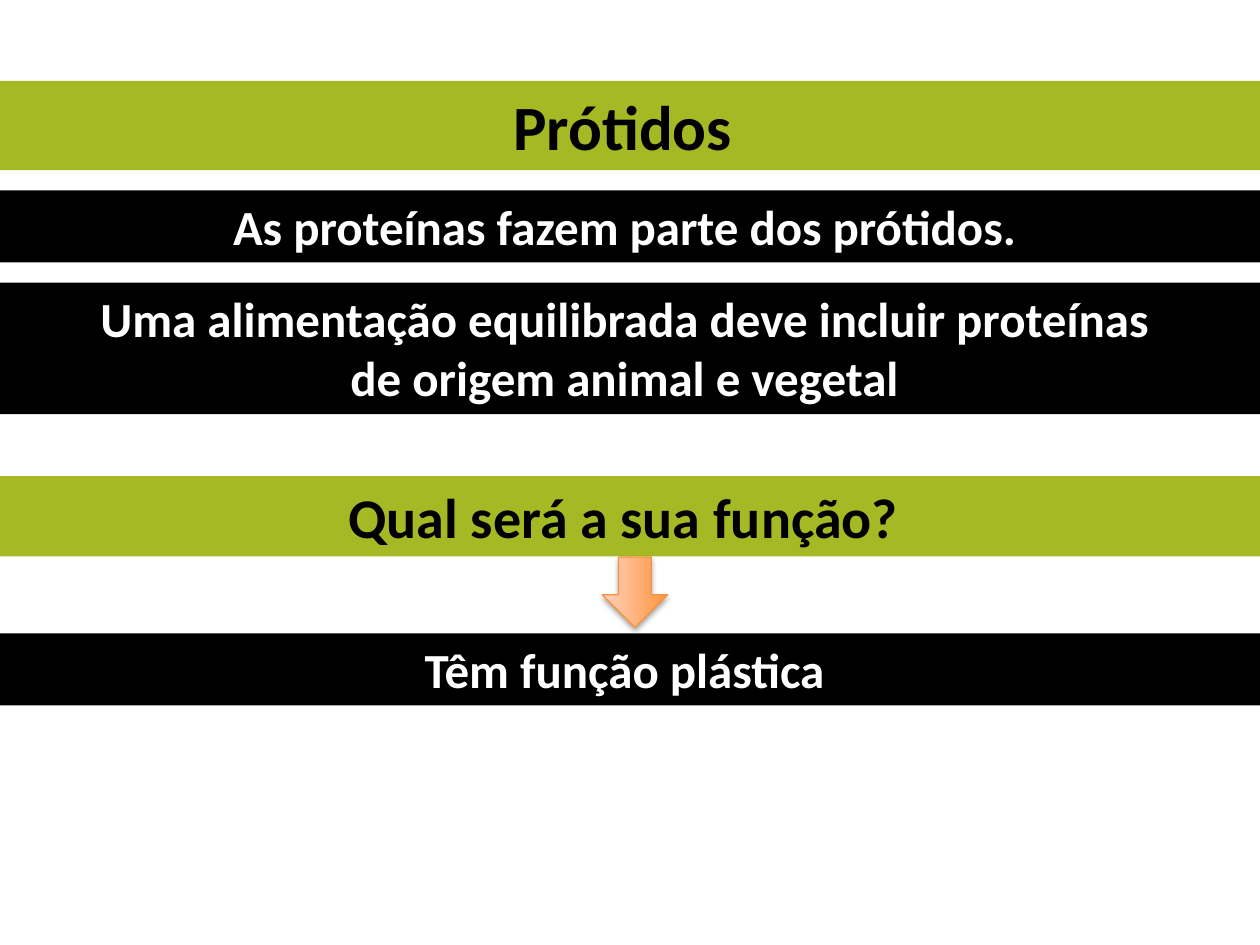
import pptx
import pptx.util
from pptx.dml.color import RGBColor
from pptx.enum.shapes import MSO_SHAPE
from pptx.enum.text import MSO_ANCHOR, MSO_AUTO_SIZE, PP_ALIGN
from lxml import etree

Cm = pptx.util.Cm
Pt = pptx.util.Pt

GREEN, BLACK, WHITE = "A4B924", "000000", "FFFFFF"
SLIDE_WIDTH, SLIDE_HEIGHT = 25.4, 19.05
STYLES = {
    "title": (GREEN, BLACK, 36),
    "question": (GREEN, BLACK, 32),
    "statement": (BLACK, WHITE, 28),
}
BANDS = [
    ("Prótidos ", "title", 1.63, 1.8),
    ("As proteínas fazem parte dos prótidos. ", "statement", 3.84, 1.45),
    ("Uma alimentação equilibrada deve incluir proteínas \vde origem animal e vegetal ",
     "statement", 5.7, 2.65),
    ("Qual será a sua função? ", "question", 9.6, 1.62),
    ("Têm função plástica ", "statement", 12.77, 1.45),
]
ARROW_BOX = (12.09, 11.28, 1.42, 1.32)
ARROW_COLORS = ("FF953E", "FFD2BD")
ARROW_LINE = "F69240"
ARROW_SHADOW = (
    '<a:effectLst xmlns:a="http://schemas.openxmlformats.org/drawingml/2006/main">'
    '<a:outerShdw blurRad="40000" dist="23000" dir="5400000" rotWithShape="0">'
    '<a:srgbClr val="000000"><a:alpha val="35000"/></a:srgbClr>'
    '</a:outerShdw></a:effectLst>'
)


def color(value):
    return RGBColor.from_string(value)


def add_band(slide, text, style, top, height):
    fill, ink, size = STYLES[style]
    band = slide.shapes.add_shape(
        MSO_SHAPE.RECTANGLE, 0, Cm(top), Cm(SLIDE_WIDTH), Cm(height))
    band.shadow.inherit = False
    band.fill.solid()
    band.fill.fore_color.rgb = color(fill)
    band.line.fill.background()
    frame = band.text_frame
    frame.word_wrap = True
    frame.auto_size = MSO_AUTO_SIZE.SHAPE_TO_FIT_TEXT
    frame.vertical_anchor = MSO_ANCHOR.TOP
    frame.text = text
    paragraph = frame.paragraphs[0]
    paragraph.alignment = PP_ALIGN.CENTER
    paragraph.font.name = "Calibri"
    paragraph.font.size = Pt(size)
    paragraph.font.bold = True
    paragraph.font.color.rgb = color(ink)


def add_arrow(slide):
    arrow = slide.shapes.add_shape(MSO_SHAPE.LEFT_ARROW, *map(Cm, ARROW_BOX))
    arrow.rotation = 270
    arrow.fill.gradient()
    arrow.fill.gradient_angle = 90
    for stop, value in zip(arrow.fill.gradient_stops, ARROW_COLORS):
        stop.color.rgb = color(value)
    arrow.line.color.rgb = color(ARROW_LINE)
    arrow.line.width = Pt(0.75)
    arrow.element.spPr.append(etree.fromstring(ARROW_SHADOW))


def main():
    deck = pptx.Presentation()
    deck.slide_width = Cm(SLIDE_WIDTH)
    deck.slide_height = Cm(SLIDE_HEIGHT)
    slide = deck.slides.add_slide(deck.slide_layouts[6])
    for band in BANDS:
        add_band(slide, *band)
    add_arrow(slide)
    deck.save("out.pptx")


if __name__ == "__main__":
    main()
